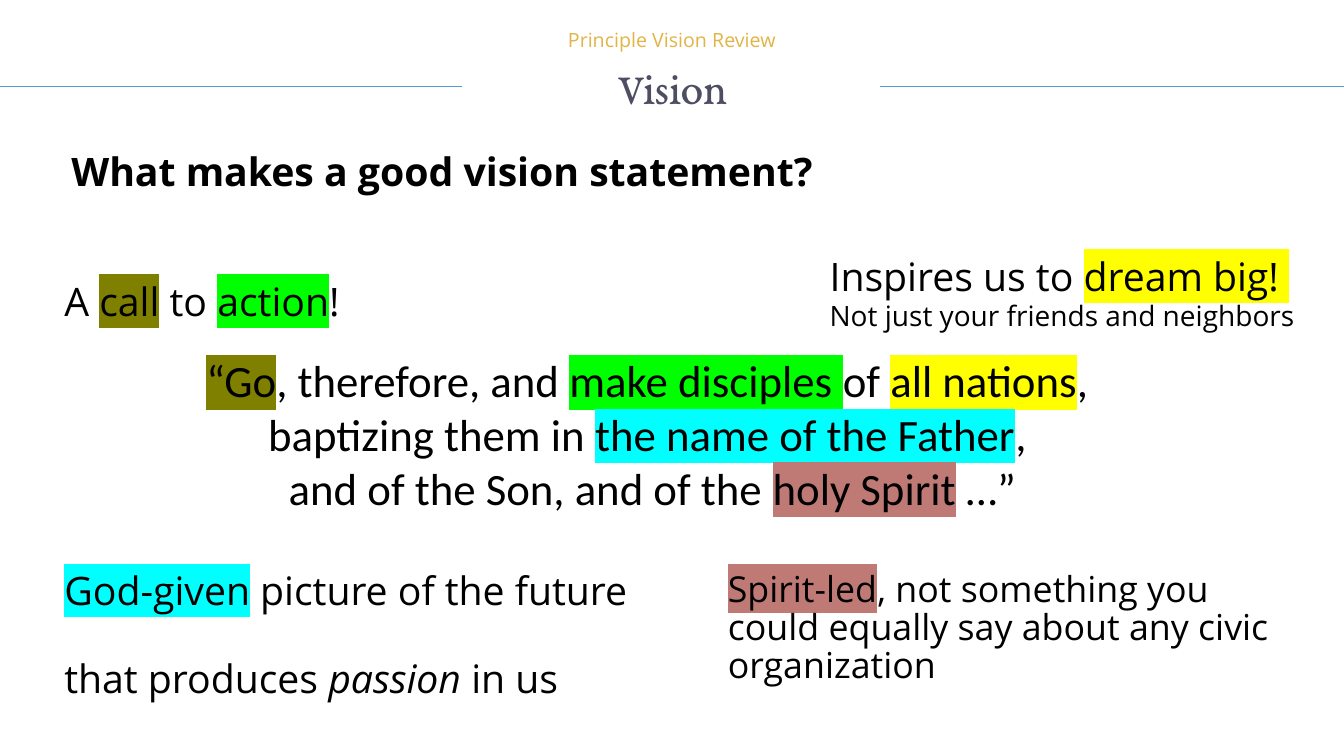
from lxml import etree
from pptx import Presentation
from pptx.dml.color import RGBColor
from pptx.enum.shapes import MSO_CONNECTOR
from pptx.enum.text import MSO_ANCHOR, MSO_AUTO_SIZE, PP_ALIGN
from pptx.oxml.ns import qn
from pptx.util import Inches, Pt

LEFT, MID = PP_ALIGN.LEFT, PP_ALIGN.CENTER
TOP, FIXED = MSO_ANCHOR.TOP, MSO_AUTO_SIZE.NONE
LINE = MSO_CONNECTOR.STRAIGHT

BLACK = RGBColor(0x00, 0x00, 0x00)
SLATE = RGBColor(0x4E, 0x4E, 0x63)
GOLD = RGBColor(0xE0, 0xB5, 0x46)
BLUE = RGBColor(0x5B, 0x9B, 0xD5)
OLIVE = RGBColor(0x80, 0x80, 0x00)
GREEN = RGBColor(0x00, 0xFF, 0x00)
YELLOW = RGBColor(0xFF, 0xFF, 0x00)
CYAN = RGBColor(0x00, 0xFF, 0xFF)
ROSE = RGBColor(0xBF, 0x7A, 0x76)

SANS, SERIF, BODY = "Open Sans", "EB Garamond", "Calibri"

deck = Presentation()
deck.slide_width, deck.slide_height = Inches(13.33), Inches(7.5)
slide = deck.slides.add_slide(deck.slide_layouts[5])


def place(box, spot):
    box.left, box.top, box.width, box.height = [Inches(n) for n in spot]
    frame = box.text_frame
    frame.word_wrap = True
    frame.auto_size = FIXED
    frame.vertical_anchor = TOP
    return frame


def write(para, runs, size, face=SANS, color=BLACK, align=LEFT):
    para.alignment = align
    for words, mark in runs:
        run = para.add_run()
        run.text = words
        font = run.font
        font.size, font.name = Pt(size), face
        font.color.rgb = color
        if mark:
            fill = run._r.rPr.find(qn("a:solidFill"))
            light = etree.Element(qn("a:highlight"))
            etree.SubElement(light, qn("a:srgbClr")).set("val", str(mark))
            fill.addnext(light)


title = place(slide.shapes.title, (3.8, 0.54, 5.75, 0.64))
write(title.paragraphs[0], [("Vision", None)], 32, SERIF, SLATE, MID)

kicker = place(slide.shapes.add_textbox(0, 0, 0, 0), (0, 0.23, 13.33, 0.34))
write(kicker.paragraphs[0], [("Principle Vision Review", None)], 14, SANS, GOLD, MID)

for start, end in [(0, 4.58), (8.73, 13.33)]:
    rule = slide.shapes.add_connector(
        LINE, Inches(start), Inches(0.86), Inches(end), Inches(0.86))
    rule.line.color.rgb = BLUE
    rule.line.width = Pt(0.75)
    etree.SubElement(rule._element.spPr, qn("a:effectLst"))

head = place(slide.shapes.add_textbox(0, 0, 0, 0), (0.61, 1.5, 11.58, 0.64))
ask = head.paragraphs[0]
write(ask, [("What makes a good vision statement?", None)], 28)
ask.line_spacing = 0.8
ask.runs[0].font.bold = True

call = place(slide.shapes.add_textbox(0, 0, 0, 0), (0.54, 2.7, 3.1, 0.64))
write(call.paragraphs[0], [
    ("A ", None), ("call", OLIVE), (" to ", None), ("action", GREEN), ("!", None)], 28)

quote = place(slide.shapes.add_textbox(0, 0, 0, 0), (1.91, 3.45, 9.12, 1.84))
verse = [
    [("“Go", OLIVE), (", therefore, and ", None), ("make disciples ", GREEN),
     ("of ", None), ("all nations", YELLOW), (", ", None)],
    [("baptizing them in ", None), ("the name of the Father", CYAN), (", ", None)],
    [("and of the Son, and of the ", None), ("holy Spirit", ROSE), (" …”", None)],
]
for row, runs in enumerate(verse):
    para = quote.add_paragraph() if row else quote.paragraphs[0]
    write(para, runs, 32, BODY, BLACK, MID)

given = place(slide.shapes.add_textbox(0, 0, 0, 0), (0.54, 5.57, 5.85, 1.11))
write(given.paragraphs[0], [("God-given", CYAN), (" picture of the future", None)], 28)
zeal = given.add_paragraph()
write(zeal, [("that produces ", None), ("passion ", None), ("in us", None)], 28)
zeal.space_before = Pt(29)
zeal.runs[1].font.italic = True

dream = place(slide.shapes.add_textbox(0, 0, 0, 0), (8.13, 2.45, 4.91, 1.07))
write(dream.paragraphs[0], [("Inspires us to ", None), ("dream big! ", YELLOW)], 28)
write(dream.add_paragraph(), [("Not just your friends and neighbors", None)], 20)

led = place(slide.shapes.add_textbox(0, 0, 0, 0), (7.12, 5.57, 5.85, 1.39))
led.margin_top = Inches(0.1)
spirit = led.paragraphs[0]
write(spirit, [
    ("Spirit-led", ROSE),
    (", not something you could equally say about any civic organization", None)], 25.5)
spirit.line_spacing = 0.89

deck.save("out.pptx")
